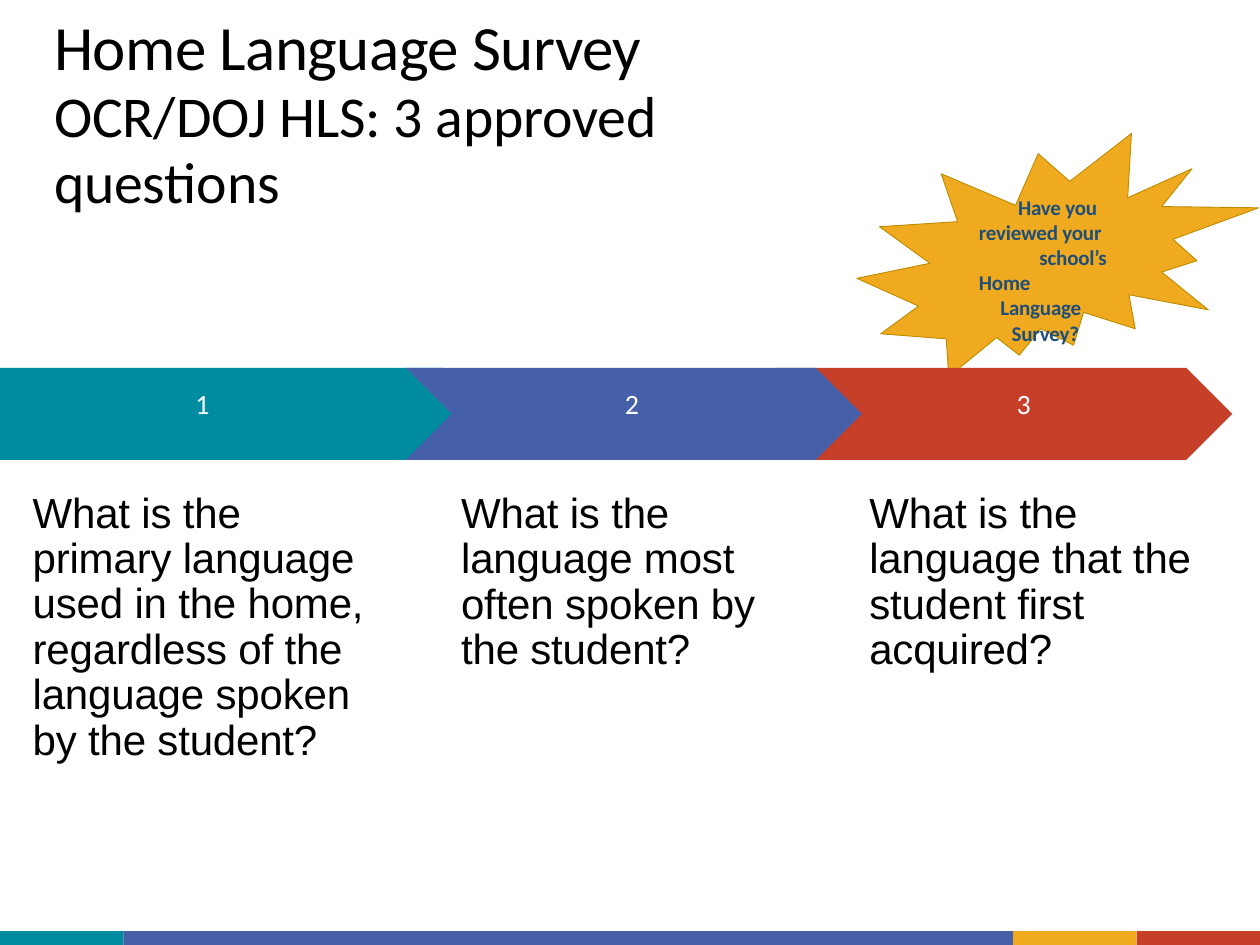
import pptx
import pptx.dml.color
import pptx.enum.shapes
import pptx.enum.text
import pptx.util

Inch, Pt = pptx.util.Inches, pptx.util.Pt
Kind = pptx.enum.shapes.MSO_SHAPE
Text = pptx.enum.text

WIDE, HIGH = 10, 7.5
HUES = {"teal": "008CA0", "blue": "455FA9", "gold": "EFAA1F", "red": "C63F28",
        "edge": "BC8C00", "navy": "1F4E79", "black": "000000", "white": "FFFFFF"}

# text, size, line spacing, letter spacing
TITLE = [("Home Language Survey", 36, 41.3, -0.3),
         ("OCR/DOJ HLS: 3 approved questions", 33, 37.7, -0.1)]

# number, question, hue, arrow left and width, number left, text left and width, text height
STEPS = [
    ("1", "What is the primary language used in the home, regardless of the "
          "language spoken by the student?", "teal", 0, 3.88, 1.54, 0.25, 2.68, 2.17),
    ("2", "What is the language most often spoken by the student?",
     "blue", 3.22, 3.62, 4.95, 3.65, 2.38, 1.45),
    ("3", "What is the language that the student first acquired?",
     "red", 6.16, 3.62, 8.06, 6.89, 2.6, 1.45),
]
ORDER = (2, 0, 1)  # back to front, so that each point lies over the next arrow
ARROW_TOP, ARROW_HIGH = 2.92, 0.73

# line, indent
NOTE = [("Have you", 0.32), ("reviewed your", 0.01), ("school’s", 0.49),
        ("Home", 0.01), ("Language", 0.18), ("Survey?", 0.27)]
BURST = [(8.49, 1.44), (8.98, 1.06), (8.95, 1.57), (9.46, 1.34), (9.22, 1.64),
         (9.99, 1.65), (9.31, 1.9), (9.5, 2.07), (9.22, 2.16), (9.59, 2.46),
         (8.96, 2.34), (9.01, 2.61), (8.6, 2.48), (8.52, 2.74), (8.26, 2.61),
         (8.09, 2.82), (7.91, 2.68), (7.53, 2.99), (7.51, 2.69), (6.99, 2.65),
         (7.29, 2.43), (6.8, 2.21), (7.38, 2.09), (6.98, 1.8), (7.6, 1.76),
         (7.47, 1.38), (8.06, 1.63), (8.24, 1.22)]

# hue, share of the slide's width
BAND = [("teal", 0.098), ("blue", 0.706), ("gold", 0.098), ("red", 0.098)]
BAND_HIGH = 0.11


def tint(name):
    return pptx.dml.color.RGBColor.from_string(HUES[name])


def paint(shape, fill, line=None):
    shape.shadow.inherit = False
    shape.fill.solid()
    shape.fill.fore_color.rgb = tint(fill)
    if line:
        shape.line.color.rgb = tint(line)
        shape.line.width = Pt(0.5)
    else:
        shape.line.fill.background()


def frame(shape, anchor=Text.MSO_ANCHOR.TOP):
    """Clear the margins of a shape's text and let it wrap."""
    body = shape.text_frame
    body.margin_left = body.margin_right = body.margin_top = body.margin_bottom = 0
    body.word_wrap = True
    body.auto_size = Text.MSO_AUTO_SIZE.NONE
    body.vertical_anchor = anchor
    return body


def write(body, text, first=True, size=16, font="Calibri", hue="black",
          bold=False, lead=None, track=0, indent=0.01):
    para = body.paragraphs[0] if first else body.add_paragraph()
    props = para._p.get_or_add_pPr()
    props.set("marL", str(Inch(indent)))
    props.set("indent", "0")
    para.alignment = Text.PP_ALIGN.LEFT
    para.space_before = Pt(0)
    if lead:
        para.line_spacing = Pt(lead)
    run = para.add_run()
    run.text = text
    run.font.size, run.font.name, run.font.bold = Pt(size), font, bold
    run.font.color.rgb = tint(hue)
    run._r.get_or_add_rPr().set("spc", str(round(track * 100)))


def box(slide, *place):
    return frame(slide.shapes.add_textbox(*map(Inch, place)))


def main():
    deck = pptx.Presentation()
    deck.slide_width, deck.slide_height = Inch(WIDE), Inch(HIGH)
    slide = deck.slides.add_slide(deck.slide_layouts[5])

    title = slide.shapes.title
    title.left, title.top, title.width, title.height = map(Inch, (0.42, 0.33, 6.6, 1.13))
    body = frame(title, Text.MSO_ANCHOR.MIDDLE)
    for i, (text, size, lead, track) in enumerate(TITLE):
        write(body, text, i == 0, size=size, lead=lead, track=track)

    pen = slide.shapes.build_freeform(*map(Inch, BURST[0]), scale=1.0)
    pen.add_line_segments([(Inch(x), Inch(y)) for x, y in BURST[1:]], close=True)
    paint(pen.convert_to_shape(), "gold", "edge")
    body = box(slide, 7.76, 1.54, 1.1, 1.22)
    for i, (text, indent) in enumerate(NOTE):
        write(body, text, i == 0, size=12, hue="navy", bold=True,
              track=-0.1, indent=indent)

    for i in ORDER:
        hue, left, width = STEPS[i][2:5]
        kind = Kind.CHEVRON if i else Kind.PENTAGON
        arrow = slide.shapes.add_shape(
            kind, *map(Inch, (left, ARROW_TOP, width, ARROW_HIGH)))
        paint(arrow, hue)

    left = 0
    for hue, share in BAND:
        width = share * WIDE
        bar = slide.shapes.add_shape(
            Kind.RECTANGLE, *map(Inch, (left, HIGH - BAND_HIGH, width, BAND_HIGH)))
        paint(bar, hue)
        left += width

    for num, ask, _, _, _, spot, left, width, high in STEPS:
        write(box(slide, spot, 3.07, 0.14, 0.29), num, hue="white")
        write(box(slide, left, 3.9, width, high), ask,
              size=24, font="Arial", lead=25.9, track=-0.1)

    deck.save("out.pptx")


if __name__ == "__main__":
    main()
